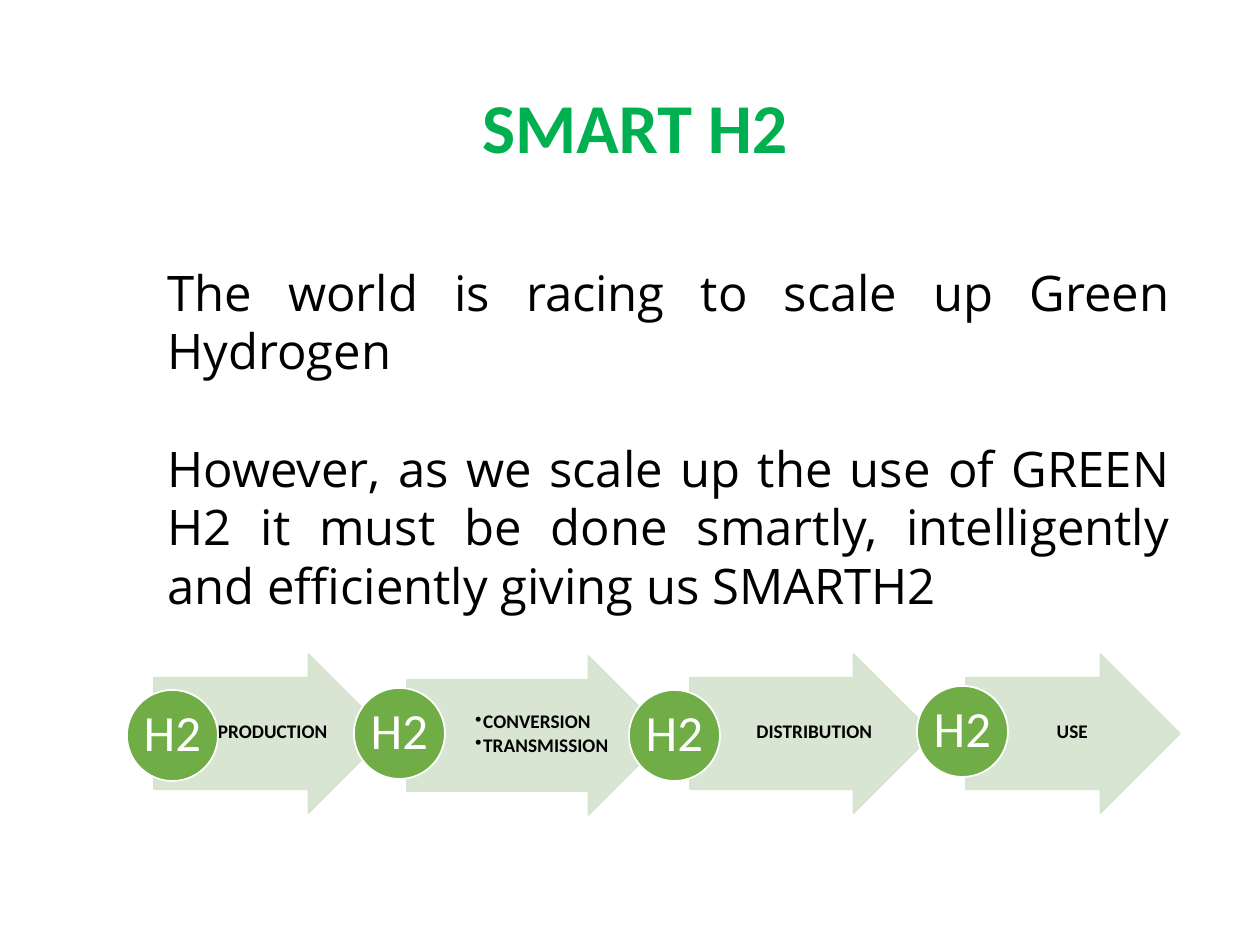
from lxml.etree import SubElement
from pptx import Presentation
from pptx.dml.color import RGBColor
from pptx.enum.shapes import MSO_SHAPE as Shape
from pptx.enum.text import MSO_ANCHOR as Anchor, MSO_AUTO_SIZE as AutoSize, PP_ALIGN as Align
from pptx.oxml.ns import qn
from pptx.util import Pt

PX = 914400 / 126
GREEN = RGBColor(0x00, 0xB0, 0x50)
LEAF = RGBColor(0x70, 0xAD, 0x47)
PALE = RGBColor(0xD4, 0xE2, 0xCE)
BLACK = RGBColor(0, 0, 0)
WHITE = RGBColor(0xFF, 0xFF, 0xFF)


def px(length):
    return round(length * PX)


class Deck:
    heading_font = "Calibri"
    body_font = "Open Sans"
    arrow_height = 159
    circle_size = 91

    def __init__(self):
        self.prs = Presentation()
        self.prs.slide_width, self.prs.slide_height = px(1260), px(945)
        self.slide = self.prs.slides.add_slide(self.prs.slide_layouts[1])

    def place(self, holder, left, top, width, height):
        holder.left, holder.top = px(left), px(top)
        holder.width, holder.height = px(width), px(height)
        frame = holder.text_frame
        frame.auto_size = AutoSize.NONE
        frame.vertical_anchor = Anchor.TOP
        return frame

    def style(self, paragraph, font, size, color, bold=False, align=Align.CENTER):
        paragraph.alignment = align
        for run in paragraph.runs:
            run.font.name, run.font.size = font, Pt(size)
            run.font.color.rgb, run.font.bold = color, bold

    def tight_frame(self, shape, inset):
        frame = shape.text_frame
        frame.word_wrap = True
        frame.vertical_anchor = Anchor.MIDDLE
        frame.margin_left = frame.margin_right = px(inset)
        frame.margin_top = frame.margin_bottom = px(2)
        return frame

    def bullet(self, paragraph, margin=0, indent=0, mark=None):
        props = paragraph._p.get_or_add_pPr()
        props.set("marL", str(px(margin)))
        props.set("indent", str(px(indent)))
        if mark:
            SubElement(props, qn("a:buChar")).set("char", mark)
        else:
            SubElement(props, qn("a:buNone"))

    def title(self, text, *box):
        frame = self.place(self.slide.shapes.title, *box)
        frame.text = text
        self.style(frame.paragraphs[0], self.heading_font, 40, GREEN, True, Align.RIGHT)

    def body(self, statements, *box):
        frame = self.place(self.slide.placeholders[1], *box)
        frame.text = "\n".join(statements)
        for i, paragraph in enumerate(frame.paragraphs):
            self.bullet(paragraph)
            paragraph.line_spacing = Pt(33.5)
            paragraph.space_before = Pt(33.5 if i else 0)
            self.style(paragraph, self.body_font, 28, BLACK, align=Align.JUSTIFY)

    def shape(self, preset, fill, line, *box):
        shape = self.slide.shapes.add_shape(preset, *map(px, box))
        shape.shadow.inherit = False
        shape.fill.solid()
        shape.fill.fore_color.rgb = fill
        shape.line.color.rgb = line
        shape.line.width = Pt(1)
        return shape

    def arrow(self, left, top, width):
        arrow = self.shape(Shape.RIGHT_ARROW, PALE, PALE, left, top, width, self.arrow_height)
        arrow.adjustments[0], arrow.adjustments[1] = 0.7, 0.5
        for color in arrow._element.spPr.iter(qn("a:srgbClr")):
            SubElement(color, qn("a:alpha")).set("val", "89000")

    def label(self, lines, left, top, width):
        box = self.slide.shapes.add_textbox(
            px(left + width / 4), px(top + 23), px(width * 3 / 4 - 55), px(111))
        frame = self.tight_frame(box, 3)
        frame.text = "\n".join(lines)
        listed = len(lines) > 1
        for i, paragraph in enumerate(frame.paragraphs):
            if listed:
                self.bullet(paragraph, 8, -10, "•")
            paragraph.line_spacing = 0.9
            paragraph.space_before = Pt(1.6 if i else 0)
            self.style(paragraph, self.heading_font, 11, BLACK, True,
                       Align.LEFT if listed else Align.CENTER)

    def circle(self, text, left, top):
        circle = self.shape(Shape.OVAL, LEAF, WHITE, left, top, self.circle_size, self.circle_size)
        frame = self.tight_frame(circle, 2)
        frame.text = text
        frame.paragraphs[0].line_spacing = 0.9
        self.style(frame.paragraphs[0], self.heading_font, 29, WHITE)


def main():
    deck = Deck()
    deck.title("SMART H2", 207, 77, 593, 97)
    deck.body([
        "The world is racing to scale up Green Hydrogen",
        "However, as we scale up the use of GREEN H2 it must be done smartly, "
        "intelligently and efficiently giving us SMARTH2",
    ], 155, 256, 1027, 370)
    stages = [
        (["PRODUCTION"], (154, 654, 234), (127, 690)),
        (["CONVERSION", "TRANSMISSION"], (407, 656, 261), (354, 688)),
        (["DISTRIBUTION"], (690, 654, 243), (629, 690)),
        (["USE"], (966, 654, 214), (917, 686)),
    ]
    for lines, span, corner in stages:
        deck.arrow(*span)
        deck.label(lines, *span)
        deck.circle("H2", *corner)
    deck.prs.save("out.pptx")


if __name__ == "__main__":
    main()
